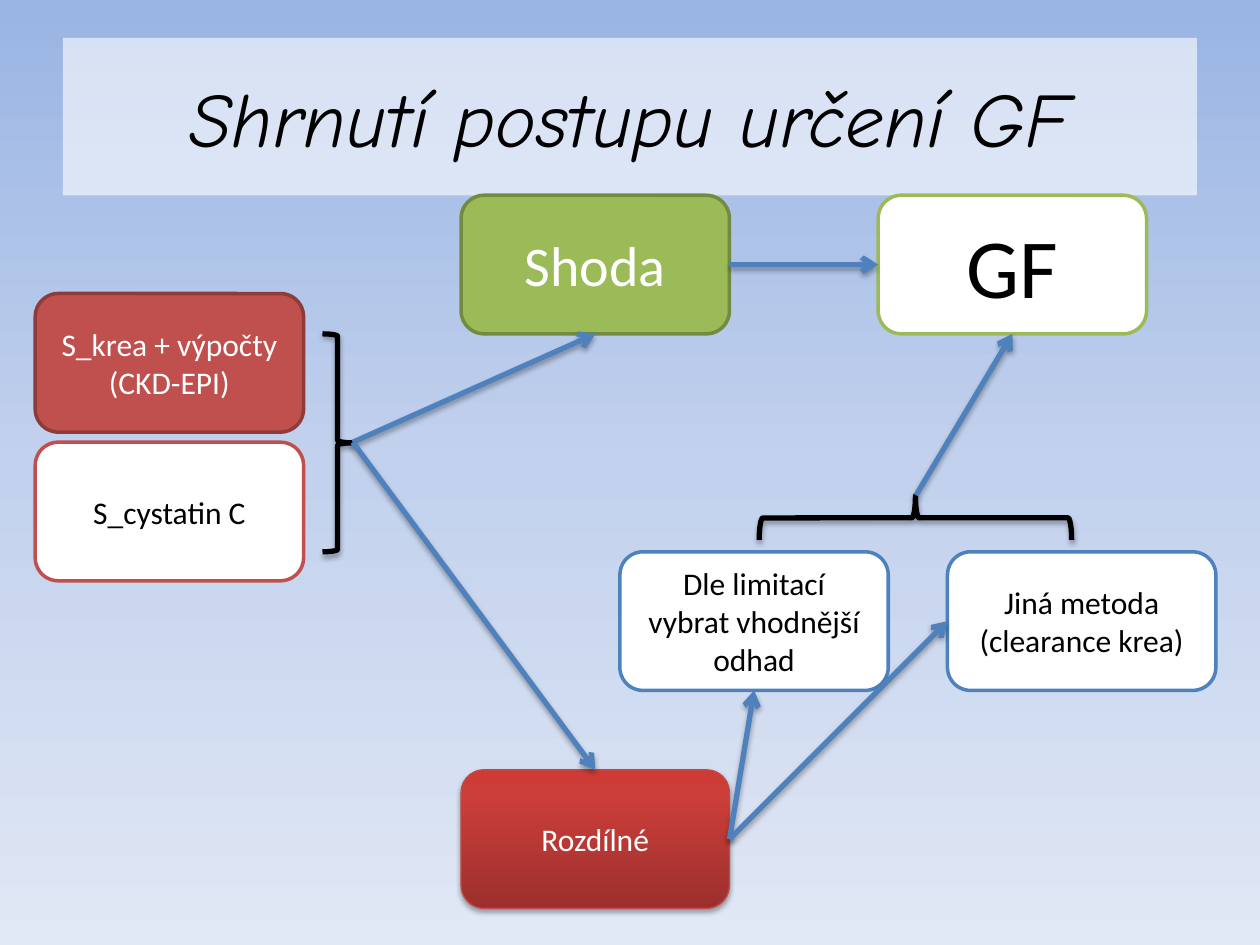
from lxml import etree
from pptx import Presentation
from pptx.dml.color import RGBColor
from pptx.enum.shapes import MSO_CONNECTOR, MSO_SHAPE
from pptx.enum.text import MSO_ANCHOR, PP_ALIGN
from pptx.oxml.ns import qn
from pptx.util import Inches, Pt

ROUNDED = MSO_SHAPE.ROUNDED_RECTANGLE
RIGHT_BRACE, LEFT_BRACE = MSO_SHAPE.RIGHT_BRACE, MSO_SHAPE.LEFT_BRACE
STRAIGHT = MSO_CONNECTOR.STRAIGHT
MIDDLE, CENTER = MSO_ANCHOR.MIDDLE, PP_ALIGN.CENTER
TOP, LEFT, BOTTOM, RIGHT = range(4)

THEME = {
    "title_font": "Comic Neue", "body_font": "Calibri",
    "title": 44, "result": 48, "match": 32, "body": 18,
    "black": "000000", "white": "FFFFFF",
    "red": "C0504D", "dark_red": "8E3B39", "edge_red": "BF4C48",
    "green": "9BBB59", "dark_green": "738A42", "blue": "4F81BD",
    "sky": [(0, "9AB5E4"), (50, "C2D1ED"), (100, "E1E8F5")],
    "glossy_red": [(0, "9C2F2D"), (80, "CB3E3A"), (100, "CE3B37")],
    "outline": 2, "thin": 0.75, "arrow": 3,
}

TITLE = "Shrnutí postupu určení GF"
TITLE_BOX = (0.5, 0.3, 9, 1.25)
STEP_SIZE = (2.13, 1.1)
# key: (text, left, top, fill, outline, text colour, text size)
STEPS = {
    "creatinine": ("S_krea + výpočty\v(CKD-EPI)", 0.28, 2.33, "red", "dark_red", "white", "body"),
    "cystatin": ("S_cystatin C", 0.28, 3.51, "white", "red", "black", "body"),
    "match": ("Shoda", 3.66, 1.55, "green", "dark_green", "white", "match"),
    "gf": ("GF", 6.97, 1.55, "white", "green", "black", "result"),
    "differ": ("Rozdílné", 3.66, 6.11, "glossy_red", "edge_red", "white", "body"),
    "estimate": ("Dle limitací vybrat vhodnější odhad", 4.92, 4.38, "white", "blue", "black", "body"),
    "other": ("Jiná metoda\n(clearance krea)", 7.52, 4.38, "white", "blue", "black", "body"),
}
# (shape, left, top, width, height, rotation)
BRACES = [
    (RIGHT_BRACE, 2.56, 2.65, 0.24, 1.73, 0),
    (LEFT_BRACE, 7.09, 2.87, 0.35, 2.48, 90),
]
INPUTS_TIP, METHODS_TIP = (2.8, 3.51), (7.27, 3.93)
# each end is a point, or a step with one of its sides
ARROWS = [
    (INPUTS_TIP, ("match", BOTTOM)),
    (INPUTS_TIP, ("differ", TOP)),
    (("differ", RIGHT), ("estimate", BOTTOM)),
    (("differ", RIGHT), ("other", LEFT)),
    (("match", RIGHT), ("gf", LEFT)),
    (METHODS_TIP, ("gf", BOTTOM)),
]


def color(name):
    return RGBColor.from_string(THEME[name])


def add_xml(parent, tag, **attributes):
    return etree.SubElement(parent, qn(tag), attributes)


def fill_gradient(owner, stops, angle):
    """Fill a shape or background; the angle runs counter-clockwise."""
    owner.fill.gradient()
    owner.fill.gradient_angle = angle
    stop_list = next(owner._element.iter(qn("a:gsLst")))
    for old in list(stop_list):
        stop_list.remove(old)
    for position, rgb in stops:
        stop = add_xml(stop_list, "a:gs", pos=str(position * 1000))
        add_xml(stop, "a:srgbClr", val=rgb)


def cast_shadow(drawn):
    properties = drawn._element.spPr
    effects = properties.find(qn("a:effectLst"))
    if effects is None:
        effects = add_xml(properties, "a:effectLst")
    shadow = add_xml(effects, "a:outerShdw", blurRad="40000", dist="23000",
                     dir="5400000", rotWithShape="0")
    tint = add_xml(shadow, "a:srgbClr", val=THEME["black"])
    add_xml(tint, "a:alpha", val="35000")


def set_line(drawn, name, width):
    drawn.line.color.rgb = color(name)
    drawn.line.width = Pt(THEME[width])


def write(box, text, font, size, ink, italic=False):
    frame = box.text_frame
    frame.word_wrap = True
    frame.vertical_anchor = MIDDLE
    frame.text = text
    for paragraph in frame.paragraphs:
        paragraph.alignment = CENTER
        for run in paragraph.runs:
            run.font.name = THEME[font]
            run.font.size = Pt(THEME[size])
            run.font.color.rgb = color(ink)
            if italic:
                run.font.italic = True


def add_title(slide):
    title = slide.shapes.add_textbox(*map(Inches, TITLE_BOX))
    title.fill.solid()
    title.fill.fore_color.rgb = color("white")
    tint = next(title._element.spPr.iter(qn("a:srgbClr")))
    add_xml(tint, "a:alpha", val="60000")
    write(title, TITLE, "title_font", "title", "black", italic=True)


def add_step(slide, text, left, top, fill, outline, ink, size):
    step = slide.shapes.add_shape(ROUNDED, *map(Inches, (left, top, *STEP_SIZE)))
    step.shadow.inherit = False
    if fill == "glossy_red":
        fill_gradient(step, THEME[fill], 90)
        set_line(step, outline, "thin")
        cast_shadow(step)
    else:
        step.fill.solid()
        step.fill.fore_color.rgb = color(fill)
        set_line(step, outline, "outline")
    write(step, text, "body_font", size, ink)
    return step


def add_brace(slide, kind, left, top, width, height, rotation):
    brace = slide.shapes.add_shape(kind, *map(Inches, (left, top, width, height)))
    brace.rotation = rotation
    brace.shadow.inherit = False
    brace.fill.background()
    set_line(brace, "black", "arrow")
    cast_shadow(brace)


def add_arrow(slide, steps, start, end):
    tip = start if start[0] not in steps else (0, 0)
    begin = tuple(map(Inches, tip))
    arrow = slide.shapes.add_connector(STRAIGHT, *begin, *begin)
    if start[0] in steps:
        arrow.begin_connect(steps[start[0]], start[1])
    arrow.end_connect(steps[end[0]], end[1])
    set_line(arrow, "blue", "arrow")
    add_xml(arrow._element.spPr.find(qn("a:ln")), "a:tailEnd", type="arrow")
    cast_shadow(arrow)


def main():
    deck = Presentation()
    deck.slide_width, deck.slide_height = Inches(10), Inches(7.5)
    slide = deck.slides.add_slide(deck.slide_layouts[6])
    fill_gradient(slide.background, THEME["sky"], 270)
    add_title(slide)
    steps = {key: add_step(slide, *step) for key, step in STEPS.items()}
    for brace in BRACES:
        add_brace(slide, *brace)
    for start, end in ARROWS:
        add_arrow(slide, steps, start, end)
    deck.save("out.pptx")


if __name__ == "__main__":
    main()
